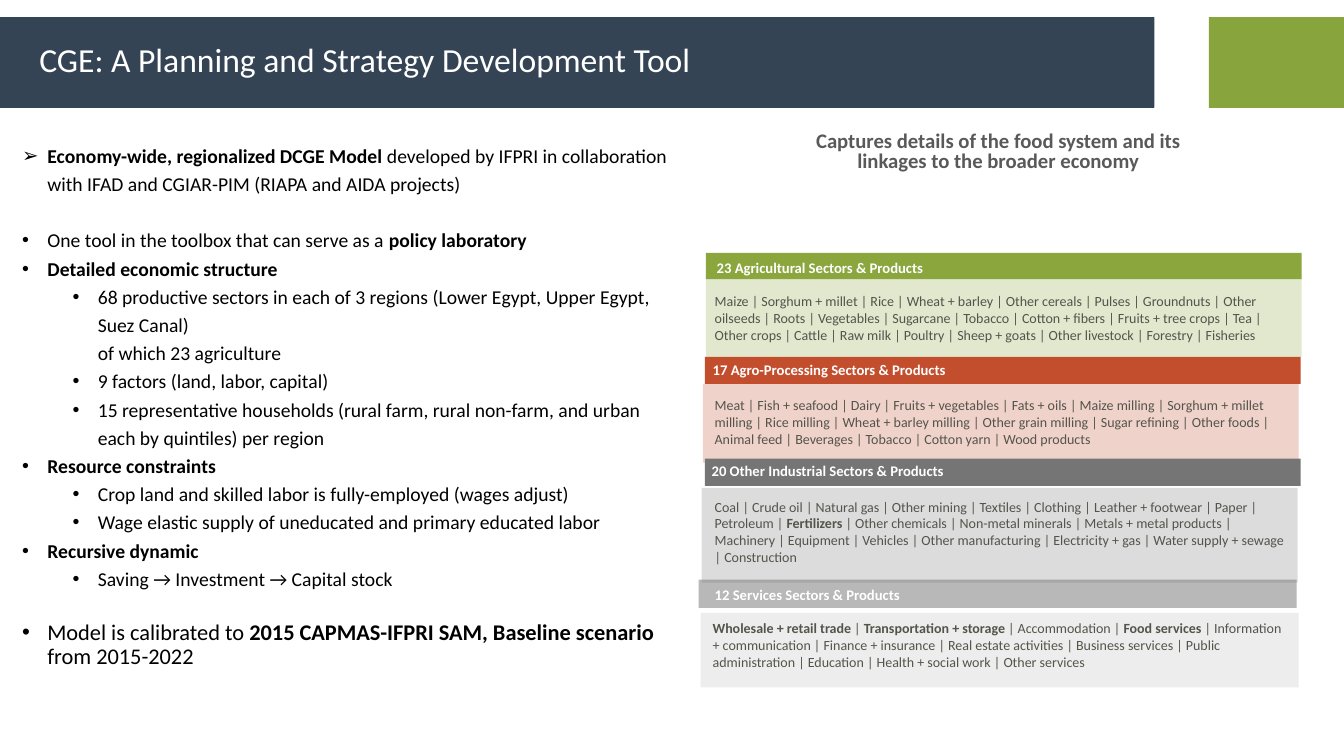
from dataclasses import dataclass

from lxml import etree
from pptx import Presentation
from pptx.dml.color import RGBColor
from pptx.enum.shapes import MSO_SHAPE
from pptx.enum.text import MSO_ANCHOR, MSO_AUTO_SIZE, PP_ALIGN
from pptx.oxml.ns import qn
from pptx.util import Pt

PX = 9144
RECT, ROUND = MSO_SHAPE.RECTANGLE, MSO_SHAPE.ROUNDED_RECTANGLE
TOP, MIDDLE = MSO_ANCHOR.TOP, MSO_ANCHOR.MIDDLE
LEFT, CENTER = PP_ALIGN.LEFT, PP_ALIGN.CENTER
NO_FIT = MSO_AUTO_SIZE.NONE
FONT = "Calibri"
Box = tuple[int, int, int, int]


@dataclass
class Sector:
    heading: str
    products: str
    color: str
    panel: Box
    products_box: Box
    bar: Box
    heading_box: Box


@dataclass
class Bullet:
    text: str
    level: int = 0
    char: str = "•"
    size: int = 14
    spacing: float = 1.2
    before: int = 0


SECTORS = [
    Sector("23 Agricultural Sectors & Products",
           "Maize | Sorghum + millet | Rice | Wheat + barley | Other cereals | Pulses | Groundnuts | "
           "Other oilseeds | Roots | Vegetables | Sugarcane | Tobacco | Cotton + fibers | "
           "Fruits + tree crops | Tea | Other crops | Cattle | Raw milk | Poultry | Sheep + goats | "
           "Other livestock | Forestry | Fisheries",
           "8AA63D", (700, 276, 591, 78), (699, 277, 591, 77), (700, 251, 591, 26), (701, 252, 365, 29)),
    Sector("17 Agro-Processing Sectors & Products",
           "Meat | Fish + seafood | Dairy | Fruits + vegetables | Fats + oils | Maize milling | "
           "Sorghum + millet milling | Rice milling | Wheat + barley milling | Other grain milling | "
           "Sugar refining | Other foods | Animal feed | Beverages | Tobacco | Cotton yarn | Wood products",
           "C34E2D", (697, 381, 591, 78), (699, 388, 590, 61), (699, 354, 591, 27), (697, 353, 338, 29)),
    Sector("12 Services Sectors & Products",
           "**Wholesale + retail trade **| **Transportation + storage **| Accommodation | "
           "**Food services **| Information + communication | Finance + insurance | "
           "Real estate activities | Business services | Public administration | Education | "
           "Health + social work | Other services",
           "B8B8B8", (695, 608, 593, 74), (697, 609, 593, 61), (693, 575, 593, 28), (699, 576, 338, 29)),
    Sector("20 Other Industrial Sectors & Products",
           "Coal | Crude oil | Natural gas | Other mining | Textiles | Clothing | Leather + footwear | "
           "Paper | Petroleum | **Fertilizers** | Other chemicals | Non-metal minerals | "
           "Metals + metal products | Machinery | Equipment | Vehicles | Other manufacturing | "
           "Electricity + gas | Water supply + sewage | Construction",
           "757575", (696, 484, 591, 94), (699, 489, 591, 77), (699, 455, 591, 27), (696, 453, 338, 29)),
]

BULLETS = [
    Bullet("**Economy-wide, regionalized DCGE Model **developed by IFPRI in collaboration "
           "with IFAD and CGIAR-PIM (RIAPA and AIDA projects)", char="➢"),
    Bullet("One tool in the toolbox that can serve as a **policy laboratory**", before=20),
    Bullet("**Detailed economic structure**"),
    Bullet("68 productive sectors in each of 3 regions (Lower Egypt, Upper Egypt, Suez Canal)\n"
           "of which 23 agriculture", 1),
    Bullet("9 factors (land, labor, capital)", 1),
    Bullet("15 representative households (rural farm, rural non-farm, and urban each by quintiles) "
           "per region", 1),
    Bullet("**Resource constraints**"),
    Bullet("Crop land and skilled labor is fully-employed (wages adjust)", 1),
    Bullet("Wage elastic supply of uneducated and primary educated labor", 1),
    Bullet("**Recursive dynamic**"),
    Bullet("Saving → Investment → Capital stock", 1),
    Bullet("Model is calibrated to **2015 CAPMAS-IFPRI SAM, Baseline scenario **from 2015-2022",
           size=16, spacing=0.9, before=22),
]


def rgb(color: str) -> RGBColor:
    return RGBColor.from_string(color)


def place(sp, box: Box) -> None:
    sp.left, sp.top, sp.width, sp.height = (v * PX for v in box)


def write(p, text: str, size: float, color: str) -> None:
    for i, part in enumerate(text.split("**")):
        for j, line in enumerate(part.split("\n")):
            if j:
                p.add_line_break()
            if line:
                r = p.add_run()
                r.text = line
                r.font.name, r.font.size = FONT, Pt(size)
                r.font.bold = i % 2 == 1
                r.font.color.rgb = rgb(color)
    for br in p._p.findall(qn("a:br")):
        etree.SubElement(br, qn("a:rPr"), sz=str(int(size * 100)))


def add_block(s, box: Box, color: str, kind=RECT, opacity: int = 100):
    sp = s.shapes.add_shape(kind, *(v * PX for v in box))
    sp.shadow.inherit = False
    sp.fill.solid()
    sp.fill.fore_color.rgb = rgb(color)
    sp.line.fill.background()
    if opacity < 100:
        clr = sp._element.spPr.find(f".//{qn('a:srgbClr')}")
        etree.SubElement(clr, qn("a:alpha"), val=str(opacity * 1000))
    return sp


def add_text(s, box: Box, text: str, size: float, color: str, anchor=TOP):
    tf = s.shapes.add_textbox(*(v * PX for v in box)).text_frame
    tf.word_wrap = True
    tf.vertical_anchor = anchor
    write(tf.paragraphs[0], text, size, color)
    return tf.paragraphs[0]


def add_bullet(p, bullet: Bullet) -> None:
    p.level = bullet.level
    pPr = p._p.get_or_add_pPr()
    pPr.set("marL", str((75 if bullet.level else 25) * PX))
    pPr.set("indent", str(-25 * PX))
    etree.SubElement(pPr, qn("a:buFont"), typeface="Arial")
    etree.SubElement(pPr, qn("a:buChar"), char=bullet.char)
    p.line_spacing = bullet.spacing
    p.space_before = Pt(bullet.before)
    write(p, bullet.text, bullet.size, "000000")


def add_sector(s, sector: Sector) -> None:
    add_block(s, sector.panel, sector.color, opacity=25)
    add_text(s, sector.products_box, sector.products, 10, "54544B", MIDDLE)
    add_block(s, sector.bar, sector.color)
    add_text(s, sector.heading_box, f"**{sector.heading}**", 10.5, "FFFFFF")


def main() -> None:
    prs = Presentation()
    prs.slide_width, prs.slide_height = 1333 * PX, 750 * PX
    s = prs.slides.add_slide(prs.slide_layouts[1])
    title, body = s.placeholders

    add_block(s, (-22, 17, 1167, 90), "344455", ROUND).adjustments[0] = 0.01
    add_block(s, (1199, 17, 168, 90), "88A43D", ROUND).adjustments[0] = 0

    p = add_text(s, (794, 127, 392, 52),
                 "**Captures details of the food system and its linkages to the broader economy**",
                 14.8, "595959")
    p.alignment, p.line_spacing = CENTER, 0.8

    for sector in SECTORS:
        add_sector(s, sector)

    for sp, box in ((title, (29, 34, 672, 50)), (body, (12, 133, 662, 572))):
        place(sp, box)
        sp.text_frame.auto_size = NO_FIT
        sp.text_frame.vertical_anchor = TOP
        s.shapes.element.append(sp.element)

    p = title.text_frame.paragraphs[0]
    p.alignment = LEFT
    write(p, "CGE: A Planning and Strategy Development Tool", 24, "FFFFFF")

    tf = body.text_frame
    for i, bullet in enumerate(BULLETS):
        add_bullet(tf.add_paragraph() if i else tf.paragraphs[0], bullet)

    prs.save("out.pptx")


if __name__ == "__main__":
    main()
